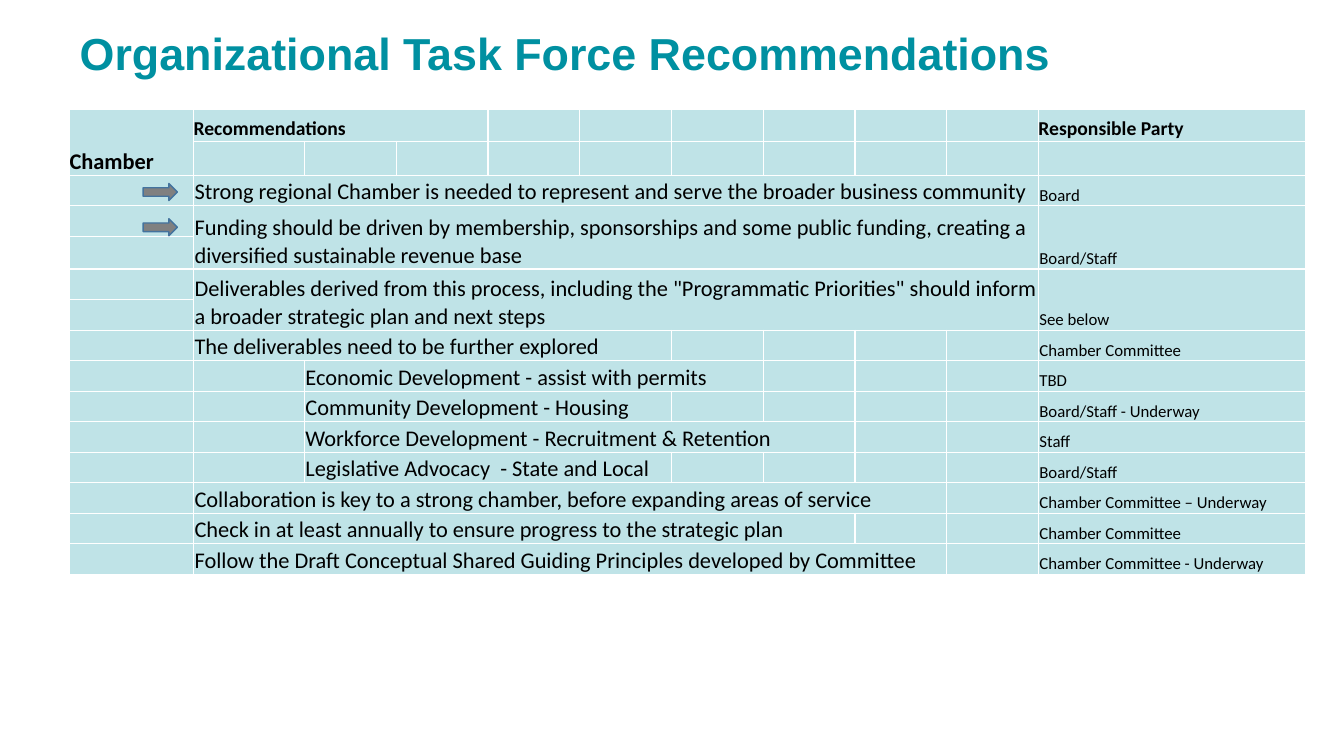
"""Build the slide of task force recommendations."""
from dataclasses import dataclass
from typing import Any

from lxml.etree import SubElement as Sub
from pptx import Presentation as Deck
from pptx.dml.color import RGBColor as RGB
from pptx.enum.shapes import MSO_SHAPE as Shape
from pptx.enum.text import MSO_ANCHOR as Anchor, MSO_AUTO_SIZE as Fit, PP_ALIGN as Align
from pptx.oxml.ns import qn
from pptx.util import Inches, Length, Pt

TEAL = RGB(0x00, 0x90, 0xA1)
BLACK = RGB(0x00, 0x00, 0x00)
WHITE = RGB(0xFF, 0xFF, 0xFF)
GRAY = RGB(0x80, 0x80, 0x80)
BLUE = RGB(0x43, 0x73, 0x9E)

WIDE, HIGH = 1333, 750
LEFT, TOP, TALL = 69, 109, 461
COLS = [123, 110] + [91] * 8 + [265]
HEAD = [31, 34]
ROWS = 15
FIRST, LAST = 1, len(COLS) - 1

HEADS = {"name": "Calibri", "size": Pt(14), "bold": True}
CORNER = HEADS | {"size": Pt(16)}
BODY = {"name": "Calibri", "size": Pt(16), "bold": False}
PARTY = BODY | {"size": Pt(12)}
TITLE = {"name": "Arial", "size": Pt(32), "bold": True}


@dataclass(frozen=True)
class Item:
    """A recommendation and who answers for it."""
    text: str
    party: str
    span: int
    col: int = FIRST
    deep: int = 1


@dataclass(frozen=True)
class Arrow:
    """A marker arrow placed on the grid."""
    left: int
    top: int


ITEMS = [
    Item("Strong regional Chamber is needed to represent and serve the broader business community",
         "Board", 9),
    Item("Funding should be driven by membership, sponsorships and some public funding, "
         "creating a diversified sustainable revenue base", "Board/Staff", 9, deep=2),
    Item('Deliverables derived from this process, including the "Programmatic Priorities" '
         "should inform a broader strategic plan and next steps", "See below", 9, deep=2),
    Item("The deliverables need to be further explored", "Chamber Committee", 5),
    Item("Economic Development - assist with permits", "TBD", 5, 2),
    Item("Community Development - Housing", "Board/Staff - Underway", 4, 2),
    Item("Workforce Development - Recruitment & Retention", "Staff", 6, 2),
    Item("Legislative Advocacy  - State and Local", "Board/Staff", 4, 2),
    Item("Collaboration is key to a strong chamber, before expanding areas of service",
         "Chamber Committee – Underway", 8),
    Item("Check in at least annually to ensure progress to the strategic plan",
         "Chamber Committee", 7),
    Item("Follow the Draft Conceptual Shared Guiding Principles developed by Committee",
         "Chamber Committee - Underway", 8),
]
ARROWS = [Arrow(142, 182 + 35 * i) for i in range(2)]


def grid(n: float) -> Length:
    """Turn grid steps into a length."""
    return Inches(n / 100)


def apply(thing: Any, form: dict[str, Any]) -> None:
    """Set each format value on an object."""
    for key, val in form.items():
        setattr(thing, key, val)


def style(cell: Any) -> None:
    """Give a cell its tint, white rules and tight margins."""
    apply(cell, {"margin_left": 0, "margin_right": 0, "margin_top": 0,
                 "margin_bottom": 0, "vertical_anchor": Anchor.BOTTOM})
    cell.fill.solid()
    cell.fill.fore_color.rgb = TEAL
    props = cell._tc.tcPr
    Sub(props.find(".//" + qn("a:srgbClr")), qn("a:alpha"), val="25000")
    for i, side in enumerate(("lnL", "lnR", "lnT", "lnB")):
        line = Sub(props, qn("a:" + side), w=str(Pt(1)))
        Sub(Sub(line, qn("a:solidFill")), qn("a:srgbClr"), val=str(WHITE))
        props.insert(i, line)
    cell.text_frame.paragraphs[0]._p.get_or_add_endParaRPr().set("sz", "1200")


def write(table: Any, row: int, col: int, text: str, form: dict[str, Any],
          deep: int = 1, span: int = 1) -> None:
    """Merge a block of cells and write its text."""
    cell = table.cell(row, col)
    if deep * span > 1:
        cell.merge(table.cell(row + deep - 1, col + span - 1))
    run = cell.text_frame.paragraphs[0].add_run()
    run.text = text
    apply(run.font, form)
    run.font.color.rgb = BLACK
    if row >= len(HEAD):
        apply(cell, dict.fromkeys(("margin_left", "margin_right", "margin_top"), grid(1)))


def add_grid(slide: Any) -> None:
    """Draw the table of recommendations."""
    frame = slide.shapes.add_table(ROWS, len(COLS), grid(LEFT), grid(TOP),
                                   grid(sum(COLS)), grid(TALL))
    table = frame.table
    apply(table, {"first_row": False, "horz_banding": False})
    for col, width in zip(table.columns, COLS):
        col.width = grid(width)
    fixed = HEAD + [30, 31, 32]
    rest = (TALL - sum(fixed)) / (ROWS - len(fixed))
    for row, size in zip(table.rows, fixed + [rest] * (ROWS - len(fixed))):
        row.height = grid(size)
    for cell in table.iter_cells():
        style(cell)
    write(table, 0, 0, "Chamber", CORNER, deep=2)
    write(table, 0, FIRST, "Recommendations", HEADS, span=3)
    write(table, 0, LAST, "Responsible Party", HEADS)
    row = len(HEAD)
    for item in ITEMS:
        write(table, row, item.col, item.text, BODY, item.deep, item.span)
        write(table, row, LAST, item.party, PARTY, item.deep)
        row += item.deep


def add_title(slide: Any) -> None:
    """Place and format the title."""
    title = slide.shapes.title
    apply(title, {"left": grid(LEFT), "top": grid(29),
                  "width": grid(1150), "height": grid(54)})
    apply(title.text_frame, {"text": "Organizational Task Force Recommendations",
                             "auto_size": Fit.NONE, "word_wrap": True,
                             "vertical_anchor": Anchor.MIDDLE})
    para = title.text_frame.paragraphs[0]
    apply(para, {"alignment": Align.LEFT, "line_spacing": 0.9})
    font = para.runs[0].font
    apply(font, TITLE)
    font.color.rgb = TEAL


def add_arrow(slide: Any, arrow: Arrow) -> None:
    """Draw one marker arrow."""
    shape = slide.shapes.add_shape(Shape.RIGHT_ARROW, grid(arrow.left), grid(arrow.top),
                                   grid(34), grid(17))
    shape.shadow.inherit = False
    shape.fill.solid()
    shape.fill.fore_color.rgb = GRAY
    shape.line.color.rgb = BLUE
    shape.line.width = Pt(1)


def main() -> None:
    """Build and save the deck."""
    deck = Deck()
    apply(deck, {"slide_width": grid(WIDE), "slide_height": grid(HIGH)})
    slide = deck.slides.add_slide(deck.slide_layouts[5])
    add_title(slide)
    add_grid(slide)
    for arrow in ARROWS:
        add_arrow(slide, arrow)
    deck.save("out.pptx")


if __name__ == "__main__":
    main()
